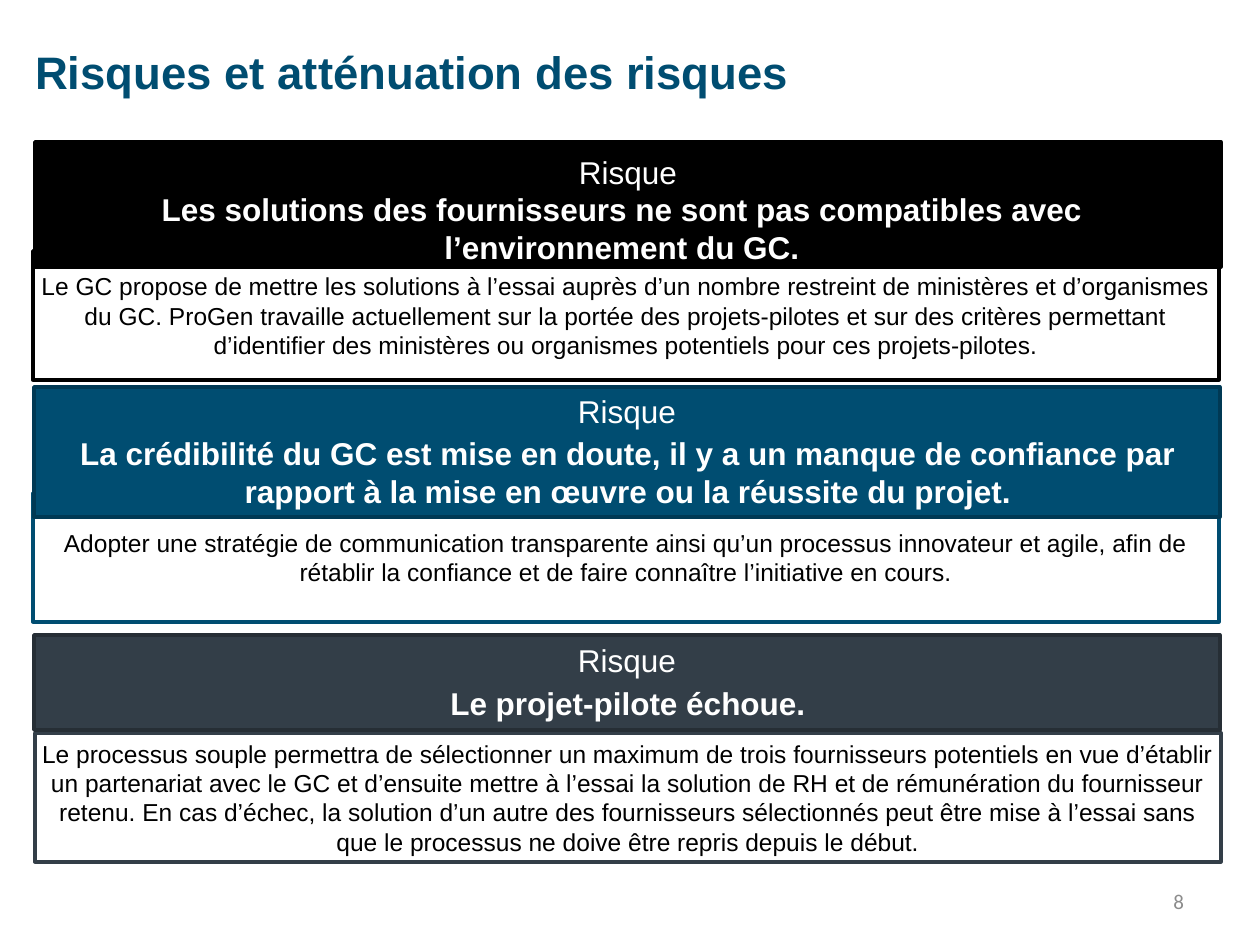
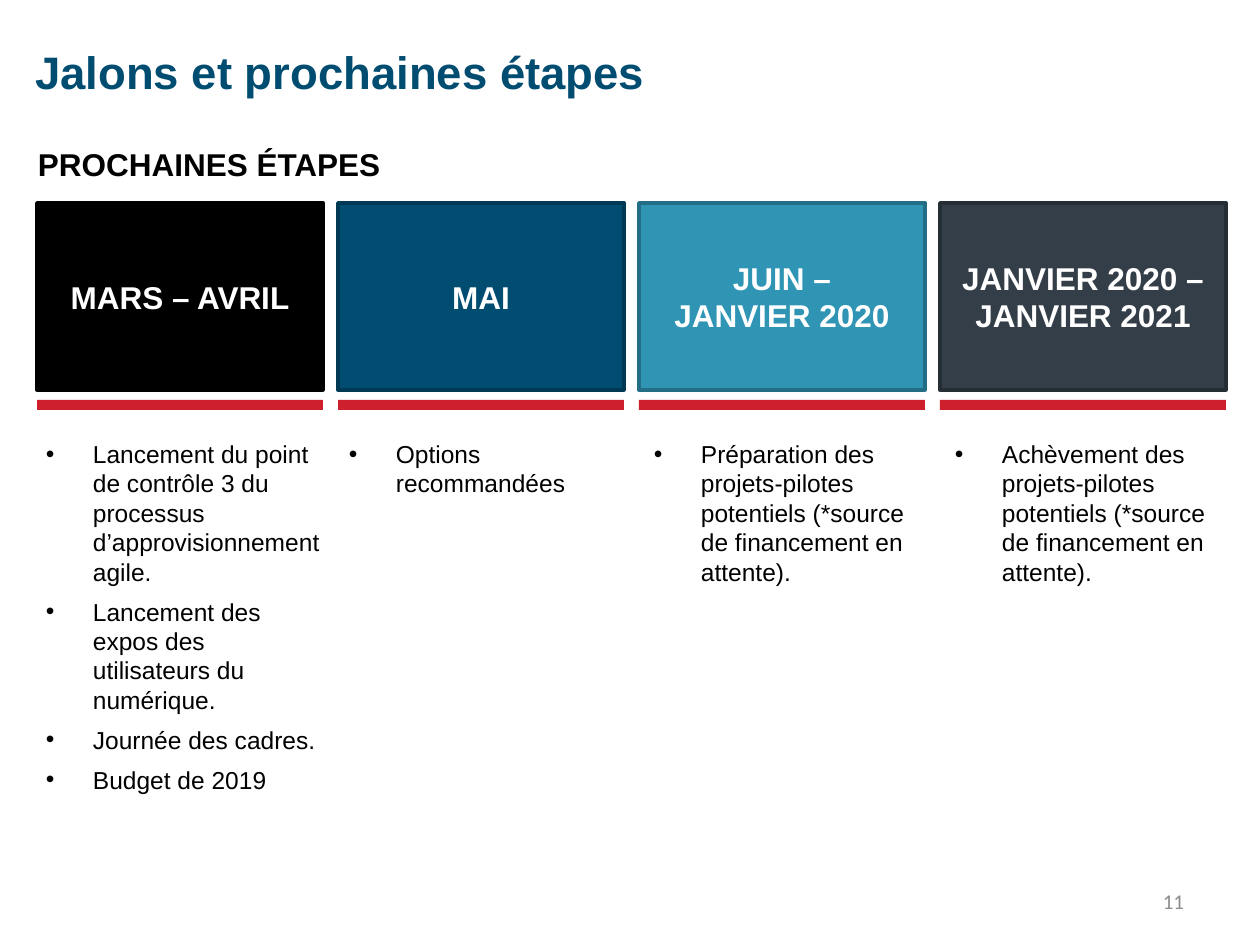
from pptx import Presentation
from pptx.dml.color import RGBColor as Rgb
from pptx.enum.shapes import MSO_SHAPE as Shape
from pptx.enum.text import MSO_ANCHOR as Anchor, PP_ALIGN as Align
from pptx.util import Pt
from pptx.oxml.ns import qn
from lxml.etree import SubElement

SCALE = 914400 / 126
COLORS = {
    "black": "000000", "white": "FFFFFF", "grey": "8C8C8C", "red": "CD202C",
    "blue": "004D71", "navy": "003954", "teal": "3095B4", "pine": "246E85",
    "slate": "333E48", "coal": "262E35",
}

# Each area is left, top, width, height in px.
RISKS = [
    dict(
        claim="Les solutions des fournisseurs ne sont pas compatibles avec l’environnement du GC.",
        plan="Le GC propose de mettre les solutions à l’essai auprès d’un nombre restreint de "
             "ministères et d’organismes du GC. ProGen travaille actuellement sur la portée des "
             "projets-pilotes et sur des critères permettant d’identifier des ministères ou "
             "organismes potentiels pour ces projets-pilotes.",
        fill="black", edge="black", head=(35, 142, 1186, 125), body=(33, 251, 1186, 129),
        label_top=147, claim_area=(35, 184, 1174, 53)),
    dict(
        claim="La crédibilité du GC est mise en doute, il y a un manque de confiance par rapport "
              "à la mise en œuvre ou la réussite du projet.",
        plan="Adopter une stratégie de communication transparente ainsi qu’un processus innovateur "
             "et agile, afin de rétablir la confiance et de faire connaître l’initiative en cours.",
        fill="blue", edge="navy", head=(34, 387, 1186, 130), body=(33, 493, 1186, 129),
        label_top=386, claim_area=(35, 428, 1186, 76)),
    dict(
        claim="Le projet-pilote échoue.",
        plan="Le processus souple permettra de sélectionner un maximum de trois fournisseurs "
             "potentiels en vue d’établir un partenariat avec le GC et d’ensuite mettre à l’essai "
             "la solution de RH et de rémunération du fournisseur retenu. En cas d’échec, la "
             "solution d’un autre des fournisseurs sélectionnés peut être mise à l’essai sans que "
             "le processus ne doive être repris depuis le début.",
        fill="slate", edge="coal", head=(34, 635, 1186, 95), body=(35, 733, 1186, 129),
        label_top=635, claim_area=(35, 678, 1186, 53)),
]

# Date, side inset of the card, fill, edge, left and width of the list, tasks
STEPS = [
    ("MARS – AVRIL", 13, "black", "black", 33, 305, [
        "Lancement du point de contrôle 3 du processus d’approvisionnement agile.",
        "Lancement des expos des utilisateurs du numérique.",
        "Journée des cadres.",
        "Budget de 2019"]),
    ("MAI", 13, "blue", "navy", 336, 287, ["Options recommandées"]),
    ("JUIN – JANVIER 2020", 30, "teal", "pine", 641, 287, [
        "Préparation des projets-pilotes potentiels (*source de financement en attente)."]),
    ("JANVIER 2020 – JANVIER 2021", 13, "slate", "coal", 942, 287, [
        "Achèvement des projets-pilotes potentiels (*source de financement en attente)."]),
]
CARD_LEFT, CARD_WIDTH, CARD_STEP = 37, 286, 301


def px(num):
    return round(num * SCALE)


def color(name):
    return Rgb.from_string(COLORS[name])


def place(item, area):
    item.left, item.top, item.width, item.height = map(px, area)


def add_rect(slide, area, fill, edge=None):
    rect = slide.shapes.add_shape(Shape.RECTANGLE, *map(px, area))
    rect.shadow.inherit = False
    rect.fill.solid()
    rect.fill.fore_color.rgb = color(fill)
    if edge:
        rect.line.color.rgb = color(edge)
        rect.line.width = Pt(2)
    else:
        rect.line.fill.background()
    return rect


def add_box(slide, area):
    return slide.shapes.add_textbox(*map(px, area))


def add_bullet(para):
    props = para._p.get_or_add_pPr()
    props.set("marL", str(px(47)))
    props.set("indent", str(px(-47)))
    SubElement(props, qn("a:buFont")).set("typeface", "Arial")
    SubElement(props, qn("a:buChar")).set("char", "•")


def write(item, lines, size, ink, bold=False, align=Align.CENTER, anchor=Anchor.TOP,
          inset=(13, 6), bullets=False, face="Arial"):
    """Fill a shape with one paragraph per line; inset is side, top in px."""
    frame = item.text_frame
    frame.text = "\n".join(lines)
    frame.word_wrap = True
    frame.vertical_anchor = anchor
    frame.margin_left = frame.margin_right = px(inset[0])
    frame.margin_top = frame.margin_bottom = px(inset[1])
    for para in frame.paragraphs:
        para.alignment = align
        if bullets:
            para.space_after = Pt(6)
            add_bullet(para)
        for run in para.runs:
            font = run.font
            font.name, font.size, font.bold = face, Pt(size), bold
            font.color.rgb = color(ink)


def add_slide(deck, title, number):
    slide = deck.slides.add_slide(deck.slide_layouts[5])
    head = slide.shapes.title
    place(head, (35, 11, 1037, 121))
    write(head, [title], 26, "blue", True, Align.LEFT, Anchor.MIDDLE, (0, 0))
    write(add_box(slide, (903, 876, 294, 50)), [number], 12, "grey",
          align=Align.RIGHT, anchor=Anchor.MIDDLE, face="Calibri")
    return slide


def add_risk(slide, risk):
    body = add_rect(slide, risk["body"], "white", risk["fill"])
    write(body, [risk["plan"]], 14, "black", anchor=Anchor.MIDDLE, inset=(5, 0))
    head = risk["head"]
    add_rect(slide, head, risk["fill"], risk["edge"])
    write(add_box(slide, risk["claim_area"]), [risk["claim"]], 18, "white", True, inset=(5, 6))
    write(add_box(slide, (head[0], risk["label_top"], head[2], 50)), ["Risque"], 18, "white")


def add_step(slide, index, step):
    date, side, fill, edge, left, width, tasks = step
    card_left = CARD_LEFT + index * CARD_STEP
    card = add_rect(slide, (card_left, 203, CARD_WIDTH, 187), fill, edge)
    write(card, [date], 18, "white", True, anchor=Anchor.MIDDLE, inset=(side, 6))
    add_rect(slide, (card_left, 400, CARD_WIDTH, 10), "red")
    write(add_box(slide, (left, 433, width, 302)), tasks, 14, "black",
          align=Align.LEFT, bullets=True)


def main():
    deck = Presentation()
    deck.slide_width, deck.slide_height = px(1260), px(945)

    slide = add_slide(deck, "Risques et atténuation des risques", "8")
    for risk in RISKS:
        add_risk(slide, risk)

    slide = add_slide(deck, "Jalons et prochaines étapes", "11")
    write(add_box(slide, (25, 139, 370, 50)), ["PROCHAINES ÉTAPES"], 18, "black", True, Align.LEFT)
    for index, step in enumerate(STEPS):
        add_step(slide, index, step)

    deck.save("out.pptx")


if __name__ == "__main__":
    main()
